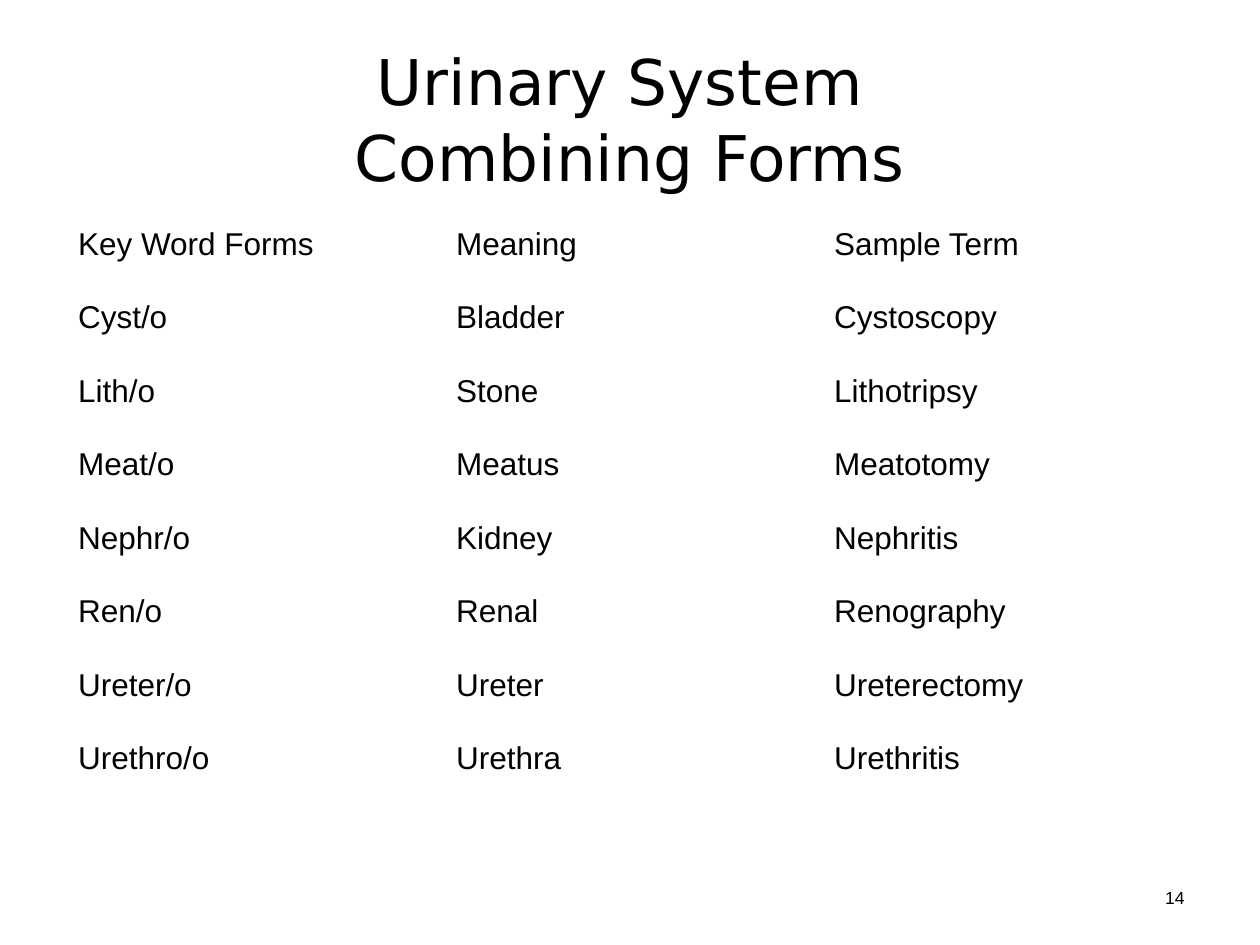
from pptx import Presentation
from pptx import util as u
from pptx.dml.color import RGBColor
from pptx.enum import text

COLORS = {"ink": "000000", "paper": "FFFFFF"}
WIDTH, HEIGHT = u.Inches(10), u.Inches(7.5)
MARGIN = 0.05
TERMS = [
    ("Key Word Forms", "Meaning", "Sample Term"),
    ("Cyst/o", "Bladder", "Cystoscopy"),
    ("Lith/o", "Stone", "Lithotripsy"),
    ("Meat/o", "Meatus", "Meatotomy"),
    ("Nephr/o", "Kidney", "Nephritis"),
    ("Ren/o", "Renal", "Renography"),
    ("Ureter/o", "Ureter", "Ureterectomy"),
    ("Urethro/o", "Urethra", "Urethritis"),
]


def share(left, top, width, height):
    """Turn shares of the slide's size into lengths."""
    return (int(WIDTH * left), int(HEIGHT * top),
            int(WIDTH * width), int(HEIGHT * height))


def write(frame, words, size=18, font="Arial", color="ink",
          align=text.PP_ALIGN.LEFT):
    """Write one formatted paragraph into a text frame."""
    paragraph = frame.paragraphs[0]
    paragraph.text = words
    paragraph.alignment = align
    for run in paragraph.runs:
        run.font.size = u.Pt(size)
        run.font.name = font
        run.font.color.rgb = RGBColor.from_string(COLORS[color])


def add_label(slide, box, words, **style):
    """Add a vertically centred text box."""
    frame = slide.shapes.add_textbox(*share(*box)).text_frame
    frame.word_wrap = True
    frame.vertical_anchor = text.MSO_ANCHOR.MIDDLE
    write(frame, words, **style)


def add_terms(slide, box, rows):
    """Add the plain table of terms."""
    table = slide.shapes.add_table(len(rows), len(rows[0]), *share(*box)).table
    table.first_row = table.horz_banding = False
    for row_index, row in enumerate(rows):
        for column_index, words in enumerate(row):
            cell = table.cell(row_index, column_index)
            cell.fill.background()
            cell.margin_left = cell.margin_right = u.Inches(0.12)
            cell.margin_top = cell.margin_bottom = u.Inches(0.05)
            write(cell.text_frame, words)


def main():
    """Build the slide and save it."""
    presentation = Presentation()
    presentation.slide_width, presentation.slide_height = WIDTH, HEIGHT
    slide = presentation.slides.add_slide(presentation.slide_layouts[6])
    fill = slide.background.fill
    fill.solid()
    fill.fore_color.rgb = RGBColor.from_string(COLORS["paper"])
    content = 1 - 2 * MARGIN
    add_label(slide, (MARGIN, 0.04, content, 0.17),
              "Urinary System \nCombining Forms", size=36,
              font="DejaVu Sans", align=text.PP_ALIGN.CENTER)
    add_terms(slide, (MARGIN, 1.75 / 7.5, content, 4.67 / 7.5), TERMS)
    add_label(slide, (0.89, 0.91, 0.06, 0.08), "14", size=10,
              align=text.PP_ALIGN.RIGHT)
    presentation.save("out.pptx")


if __name__ == "__main__":
    main()
